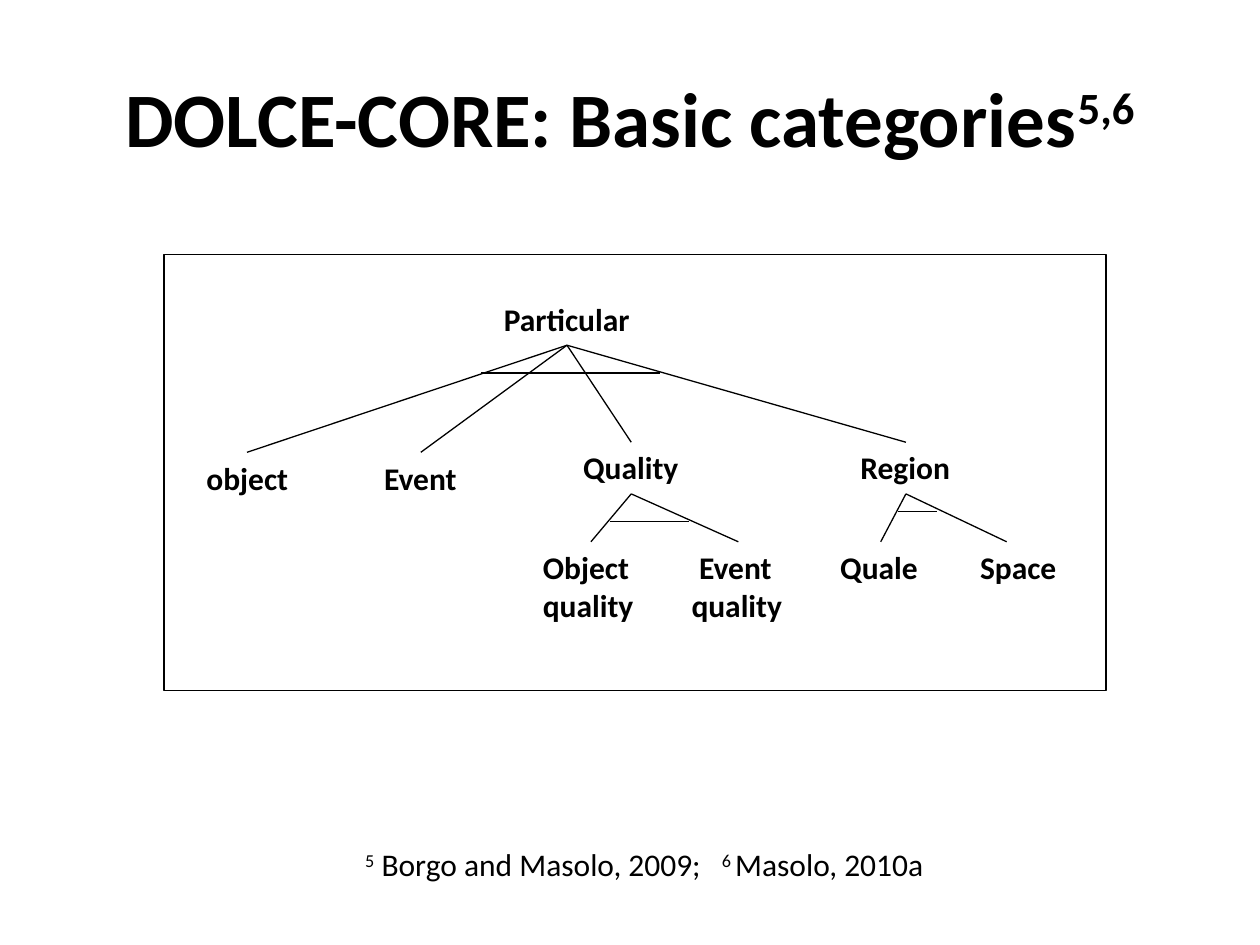
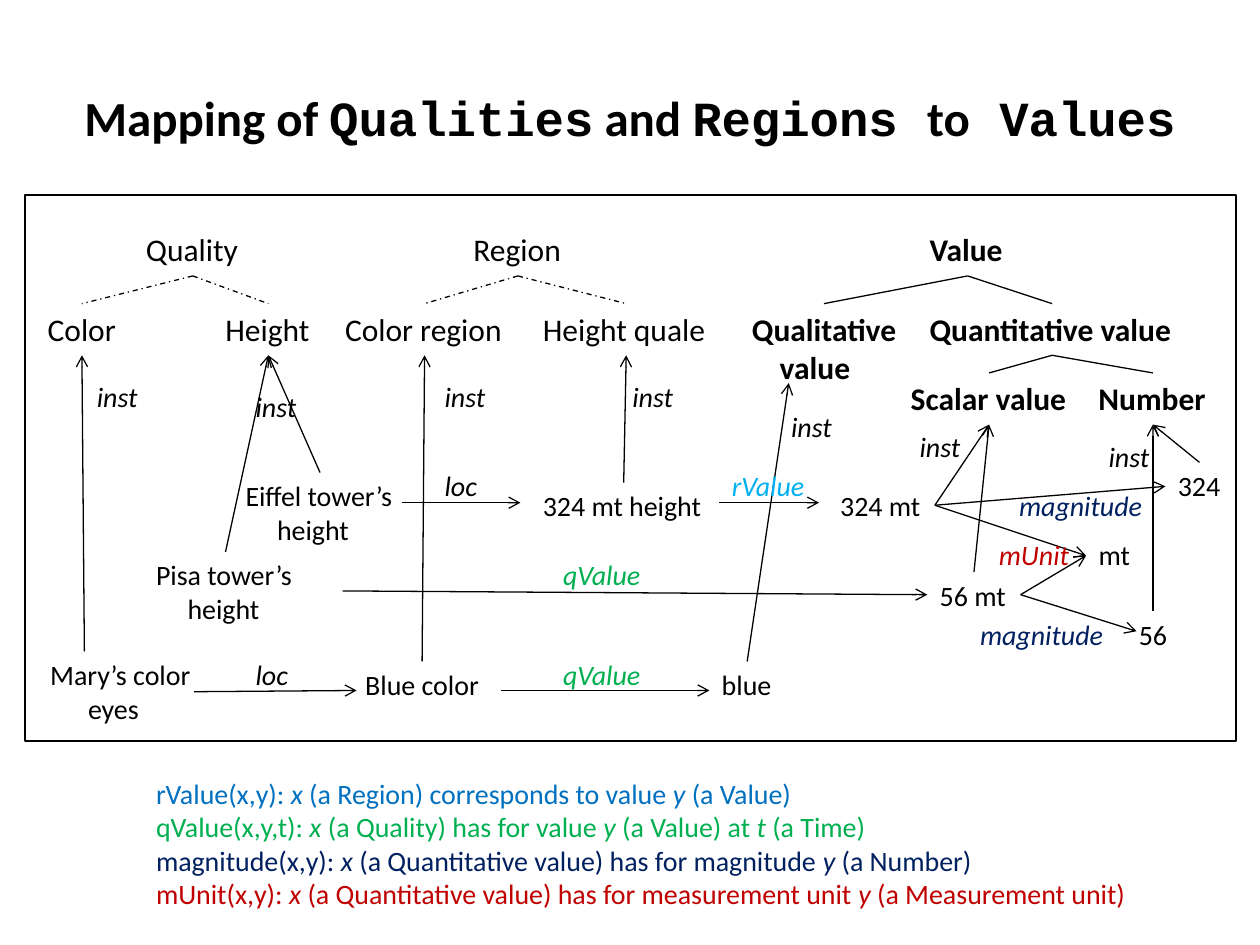
import typing

import lxml.etree
import pptx
import pptx.dml.color
import pptx.enum.dml
import pptx.enum.shapes
import pptx.enum.text
import pptx.oxml.ns
import pptx.util

PX = 9144  # EMU in one px, 100 px to the inch
HUES = {
    "black": "000000", "sky": "00B0F0", "blue": "0070C0",
    "green": "00B050", "navy": "002060", "red": "C00000",
}
SANS, MONO = "Calibri", "Courier New"
LINE_STEP = {16: 27, 18: 31}  # line height in px for each text size

BOLD = {"bold": True}
SLANT = {"italic": True}
CODE = {"name": MONO}
RAISED = {"raised": True}


class Run(typing.NamedTuple):
    text: str
    form: dict = {}


class Label(typing.NamedTuple):
    x: int
    y: int
    wide: int
    lines: list  # each line is a string or a list of runs
    size: int = 18
    form: dict = {}
    hue: str = "black"
    dents: tuple = ()  # left indent of each line


class Link(typing.NamedTuple):
    start: tuple
    end: tuple
    arrow: bool = True
    dash: bool = False


class Fan(typing.NamedTuple):
    top: tuple
    ends: list
    arrow: bool = False
    dash: bool = False


def px(count: int) -> pptx.util.Emu:
    return pptx.util.Emu(count * PX)


def color(hue: str) -> pptx.dml.color.RGBColor:
    return pptx.dml.color.RGBColor.from_string(HUES[hue])


def add_run(para, run: Run, base: dict, hue: str) -> None:
    item = para.add_run()
    item.text = run.text
    form = {"name": SANS, **base, **run.form}
    if form.pop("raised", False):
        item._r.get_or_add_rPr().set("baseline", "30000")
    item.font.color.rgb = color(form.pop("hue", hue))
    for key, value in form.items():
        setattr(item.font, key, value)


def draw_label(slide, label: Label) -> None:
    tall = LINE_STEP[label.size] * len(label.lines) + 10
    box = slide.shapes.add_textbox(px(label.x), px(label.y), px(label.wide), px(tall))
    frame = box.text_frame
    frame.word_wrap = False
    frame.auto_size = pptx.enum.text.MSO_AUTO_SIZE.SHAPE_TO_FIT_TEXT
    base = {"size": pptx.util.Pt(label.size), **label.form}
    for row, line in enumerate(label.lines):
        para = frame.add_paragraph() if row else frame.paragraphs[0]
        if label.dents and label.dents[row]:
            props = para._p.get_or_add_pPr()
            props.set("marL", str(px(label.dents[row])))
            props.set("indent", "0")
        for run in [Run(line)] if isinstance(line, str) else line:
            add_run(para, run, base, label.hue)


def draw_title(slide, size: int, runs: list[Run]) -> None:
    box = slide.shapes.add_textbox(px(50), px(30), px(900), px(125))
    frame = box.text_frame
    frame.word_wrap = True
    frame.vertical_anchor = pptx.enum.text.MSO_ANCHOR.MIDDLE
    para = frame.paragraphs[0]
    para.alignment = pptx.enum.text.PP_ALIGN.CENTER
    for run in runs:
        add_run(para, run, {"size": pptx.util.Pt(size), **BOLD}, "black")


def draw_link(slide, link: Link) -> None:
    kind = pptx.enum.shapes.MSO_CONNECTOR.STRAIGHT
    line = slide.shapes.add_connector(kind, *map(px, link.start + link.end))
    line.line.color.rgb = color("black")
    line.line.width = pptx.util.Pt(0.75)
    if link.dash:
        line.line.dash_style = pptx.enum.dml.MSO_LINE.DASH_DOT
    qn = pptx.oxml.ns.qn
    if link.arrow:
        lxml.etree.SubElement(line.line._get_or_add_ln(), qn("a:tailEnd"), type="arrow")
    lxml.etree.SubElement(line._element.spPr, qn("a:effectLst"))


def draw_fan(slide, fan: Fan) -> None:
    for end in fan.ends:
        draw_link(slide, Link(fan.top, end, fan.arrow, fan.dash))


def draw_frame(slide, x: int, y: int, wide: int, tall: int) -> None:
    kind = pptx.enum.shapes.MSO_SHAPE.RECTANGLE
    rect = slide.shapes.add_shape(kind, px(x), px(y), px(wide), px(tall))
    rect.shadow.inherit = False
    rect.fill.background()
    rect.line.color.rgb = color("black")
    rect.line.width = pptx.util.Pt(1)


def rule(name: str, *parts: str, hue: str) -> list[Run]:
    """Build a legend line in which every second part is a slanted variable."""
    runs = [Run(name + ": ", {"hue": hue})]
    for spot, part in enumerate(parts):
        runs.append(Run(part, {"hue": hue, "italic": spot % 2 == 0}))
    return runs


# Slide 1: tree of basic categories
TREE = [
    Label(390, 233, 121, ["Particular"], form=BOLD),
    Label(154, 359, 86, ["object"], form=BOLD),
    Label(295, 359, 78, ["Event"], form=BOLD),
    Label(453, 351, 96, ["Quality"], form=BOLD),
    Label(673, 351, 92, ["Region"], form=BOLD),
    Label(657, 430, 82, ["Quale"], form=BOLD),
    Label(768, 430, 81, ["Space"], form=BOLD),
    Label(421, 430, 95, ["Object", "quality"], form=BOLD),
    Label(539, 430, 93, ["Event", "quality"], form=BOLD, dents=(6, 0)),
]
TREE_FANS = [
    Fan((450, 274), [(196, 359), (334, 359), (501, 351), (719, 351)]),
    Fan((501, 392), [(469, 430), (586, 430)]),
    Fan((719, 392), [(699, 430), (799, 430)]),
]
BARS = [(382, 524, 296), (484, 547, 414), (713, 744, 406)]  # left, right, y
NOTES = [
    Label(280, 666, 300, [[Run("5", RAISED), Run(" Borgo and Masolo, 2009;")]]),
    Label(563, 666, 192, [[Run("6 ", RAISED), Run("Masolo, 2010a")]]),
]

# Slide 2: classes, their instances and the relations between them
KINDS = [
    Label(106, 178, 94, ["Quality"]),
    Label(366, 178, 90, ["Region"]),
    Label(728, 178, 78, ["Value"], form=BOLD),
    Label(28, 241, 75, ["Color"]),
    Label(169, 241, 88, ["Height"]),
    Label(264, 241, 146, ["Color region"]),
    Label(421, 241, 151, ["Height quale"]),
    Label(587, 241, 136, ["Qualitative", "value"], form=BOLD, dents=(0, 22)),
    Label(728, 241, 214, ["Quantitative value"], form=BOLD),
    Label(713, 296, 144, ["Scalar value"], form=BOLD),
    Label(862, 296, 106, ["Number"], form=BOLD),
]
THINGS = [
    Label(185, 375, 139, ["Eiffel tower’s", "height"], 16, dents=(0, 25)),
    Label(114, 438, 130, ["Pisa tower’s", "height"], 16, dents=(0, 25)),
    Label(30, 517, 145, ["Mary’s color", "eyes"], 16, dents=(0, 30)),
    Label(421, 383, 147, ["324 mt height"], 16),
    Label(657, 383, 85, ["324 mt"], 16),
    Label(280, 525, 112, ["Blue color"], 16),
    Label(563, 525, 60, ["blue"], 16),
    Label(736, 454, 73, ["56 mt"], 16),
    Label(925, 367, 54, ["324"], 16),
    Label(894, 485, 43, ["56"], 16),
    Label(862, 422, 45, ["mt"], 16),
]
# Relation names: text, width, hue, places
NAMES = [
    ("inst", 53, "black", [(67, 296), (193, 304), (343, 296), (492, 296),
                           (618, 320), (720, 336), (870, 344)]),
    ("loc", 46, "black", [(343, 367), (193, 517)]),
    ("rValue", 79, "sky", [(571, 367)]),
    ("qValue", 82, "green", [(437, 438), (437, 517)]),
    ("magnitude", 118, "navy", [(768, 485), (799, 383)]),
    ("mUnit", 76, "red", [(783, 422)]),
]
KIND_FANS = [
    Fan((153, 219), [(65, 241), (213, 241)], dash=True),
    Fan((411, 219), [(337, 241), (497, 241)], dash=True),
    Fan((768, 219), [(654, 241), (835, 241)]),
    Fan((835, 282), [(785, 296), (915, 296)]),
    Fan((742, 401), [(925, 386), (862, 441), (785, 337)], arrow=True),
    Fan((810, 472), [(862, 441), (902, 501)], arrow=True),
]
LINKS = [
    # across: loc, rValue and qValue
    Link((319, 399), (413, 399)),
    Link((571, 399), (650, 399)),
    Link((272, 469), (736, 472)),
    Link((154, 549), (283, 548)),
    Link((398, 548), (563, 548)),
    # upward: inst
    Link((67, 517), (65, 282)),
    Link((254, 375), (213, 282)),
    Link((179, 438), (213, 282)),
    Link((335, 525), (337, 282)),
    Link((495, 383), (497, 282)),
    Link((593, 525), (626, 304)),
    Link((773, 454), (785, 337)),
    Link((952, 367), (915, 337)),
    Link((915, 485), (915, 337)),
]
LEGEND = Label(114, 611, 796, [
    rule("rValue(x,y)", "x", " (a Region) corresponds to value ", "y",
         " (a Value)", hue="blue"),
    rule("qValue(x,y,t)", "x", " (a Quality) has for value ", "y",
         " (a Value) at ", "t", " (a Time)", hue="green"),
    rule("magnitude(x,y)", "x", " (a Quantitative value) has for magnitude ", "y",
         " (a Number)", hue="navy"),
    rule("mUnit(x,y)", "x", " (a Quantitative value) has for measurement unit ", "y",
         " (a Measurement unit)", hue="red"),
], 16)


def draw_tree(slide) -> None:
    draw_title(slide, 44, [Run("DOLCE-CORE: Basic categories"), Run("5,6", RAISED)])
    for label in TREE + NOTES:
        draw_label(slide, label)
    for fan in TREE_FANS:
        draw_fan(slide, fan)
    for left, right, y in BARS:
        draw_link(slide, Link((left, y), (right, y), arrow=False))
    draw_frame(slide, 130, 202, 748, 346)


def draw_map(slide) -> None:
    draw_title(slide, 28, [
        Run("Mapping of "), Run("Qualities", CODE), Run(" and "),
        Run("Regions ", CODE), Run("to"), Run(" Values", CODE),
    ])
    for label in KINDS + THINGS + [LEGEND]:
        draw_label(slide, label)
    for fan in KIND_FANS:
        draw_fan(slide, fan)
    for link in LINKS:
        draw_link(slide, link)
    for text, wide, hue, spots in NAMES:
        for x, y in spots:
            draw_label(slide, Label(x, y, wide, [text], 16, SLANT, hue))
    draw_frame(slide, 20, 155, 961, 433)


def main() -> None:
    deck = pptx.Presentation()
    deck.slide_width, deck.slide_height = px(1000), px(750)
    for draw in (draw_tree, draw_map):
        draw(deck.slides.add_slide(deck.slide_layouts[6]))
    deck.save("out.pptx")


if __name__ == "__main__":
    main()
